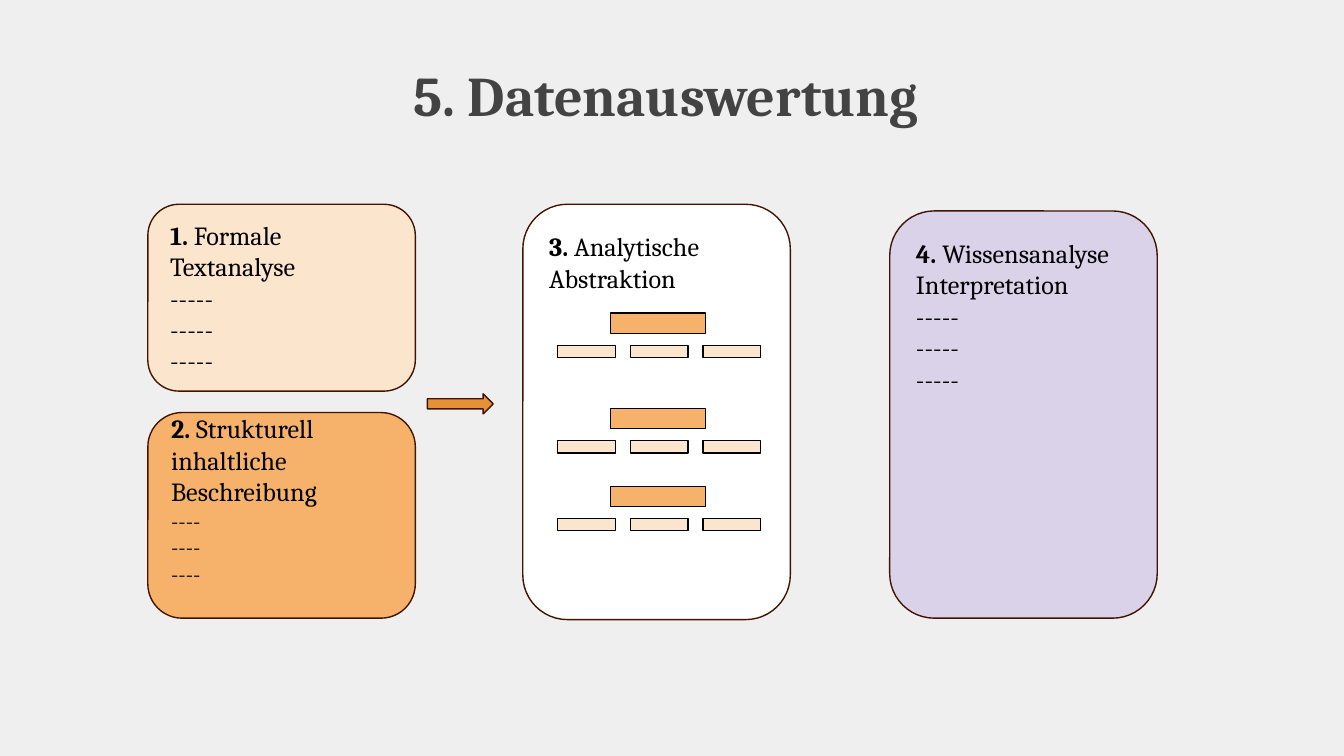
from pptx import Presentation
from pptx.dml.color import RGBColor
from pptx.enum.shapes import MSO_SHAPE
from pptx.enum.text import MSO_ANCHOR, MSO_AUTO_SIZE, PP_ALIGN
from pptx.util import Inches, Pt

PEACH, ORANGE, BROWN, BLACK = "FCE5CD", "F6B26B", "411401", "000000"


def color(hex_string):
    """Turn a hex string into a colour."""
    return RGBColor.from_string(hex_string)


def add_box(slide, kind, box, fill, line):
    """Add a filled, outlined shape in box (left, top, width, height)."""
    shape = slide.shapes.add_shape(kind, *map(Inches, box))
    shape.shadow.inherit = False
    shape.fill.solid()
    shape.fill.fore_color.rgb = color(fill)
    shape.line.color.rgb = color(line)
    shape.line.width = Pt(0.75)
    return shape


def format_frame(frame, anchor, bottom=0.1):
    """Set wrapping, anchor and insets of a text frame."""
    settings = {
        "word_wrap": True,
        "auto_size": MSO_AUTO_SIZE.NONE,
        "vertical_anchor": anchor,
        "margin_left": Inches(0.1),
        "margin_right": Inches(0.1),
        "margin_top": Inches(0.1),
        "margin_bottom": Inches(bottom),
    }
    for name, value in settings.items():
        setattr(frame, name, value)


def add_run(paragraph, text, size, bold=False, hex_string=BLACK):
    """Append a formatted run to a paragraph."""
    run = paragraph.add_run()
    run.text = text
    for name, value in {"name": "Cambria", "size": Pt(size), "bold": bold}.items():
        setattr(run.font, name, value)
    run.font.color.rgb = color(hex_string)


def add_title(slide, box, text):
    """Place and format the slide title."""
    title = slide.shapes.title
    title.left, title.top, title.width, title.height = map(Inches, box)
    format_frame(title.text_frame, MSO_ANCHOR.MIDDLE)
    paragraph = title.text_frame.paragraphs[0]
    paragraph.alignment = PP_ALIGN.CENTER
    add_run(paragraph, text, 30, True, "434343")


def add_step(slide, box, fill, number, heading, dashes=(), dash_size=14,
             anchor=MSO_ANCHOR.TOP, bottom=0.1):
    """Add a rounded step card with a numbered heading and dash lines."""
    card = add_box(slide, MSO_SHAPE.ROUNDED_RECTANGLE, box, fill, BROWN)
    frame = card.text_frame
    format_frame(frame, anchor, bottom)
    paragraph = frame.paragraphs[0]
    add_run(paragraph, f"{number}. ", 14, True)
    add_run(paragraph, heading, 14)
    for dash in dashes:
        add_run(frame.add_paragraph(), dash, dash_size)
    for paragraph in frame.paragraphs:
        paragraph.alignment = PP_ALIGN.LEFT


def add_category(slide, left, top):
    """Add a category bar above its three subcategory bars."""
    add_box(slide, MSO_SHAPE.RECTANGLE, (left + 0.39, top, 0.71, 0.15), ORANGE, BLACK)
    for column in range(3):
        bar = (left + column * 0.54, top + 0.24, 0.43, 0.09)
        add_box(slide, MSO_SHAPE.RECTANGLE, bar, PEACH, BLACK)


def add_abstraction(slide, box):
    """Add the abstraction card with its three category groups."""
    left, top = box[:2]
    add_step(slide, box, "FFFFFF", 3, "Analytische Abstraktion")
    for offset in (0.81, 1.52, 2.1):
        add_category(slide, left + 0.26, top + offset)


def main():
    """Build and save the slide."""
    presentation = Presentation()
    presentation.slide_width = Inches(10)
    presentation.slide_height = Inches(10 * 9 / 16)
    slide = presentation.slides.add_slide(presentation.slide_layouts[5])
    slide.background.fill.solid()
    slide.background.fill.fore_color.rgb = color("EFEFEF")

    add_title(slide, (0.5, 0.23, 9, 0.94), "5. Datenauswertung ")
    add_step(slide, (1.1, 1.52, 1.99, 1.39), PEACH, 1, "Formale Textanalyse",
             ["-----"] * 3, anchor=MSO_ANCHOR.MIDDLE)
    add_step(slide, (1.1, 3.07, 1.99, 1.53), ORANGE, 2,
             "Strukturell inhaltliche Beschreibung", ["----"] * 3, 12,
             MSO_ANCHOR.MIDDLE, 0.33)
    add_box(slide, MSO_SHAPE.RIGHT_ARROW, (3.18, 2.93, 0.49, 0.15), "E69138", BROWN)
    add_abstraction(slide, (3.89, 1.52, 1.99, 3.09))
    add_step(slide, (6.62, 1.57, 1.99, 3.03), "D9D2E9", 4,
             "Wissensanalyse Interpretation", ["-----"] * 3)
    presentation.save("out.pptx")


if __name__ == "__main__":
    main()
